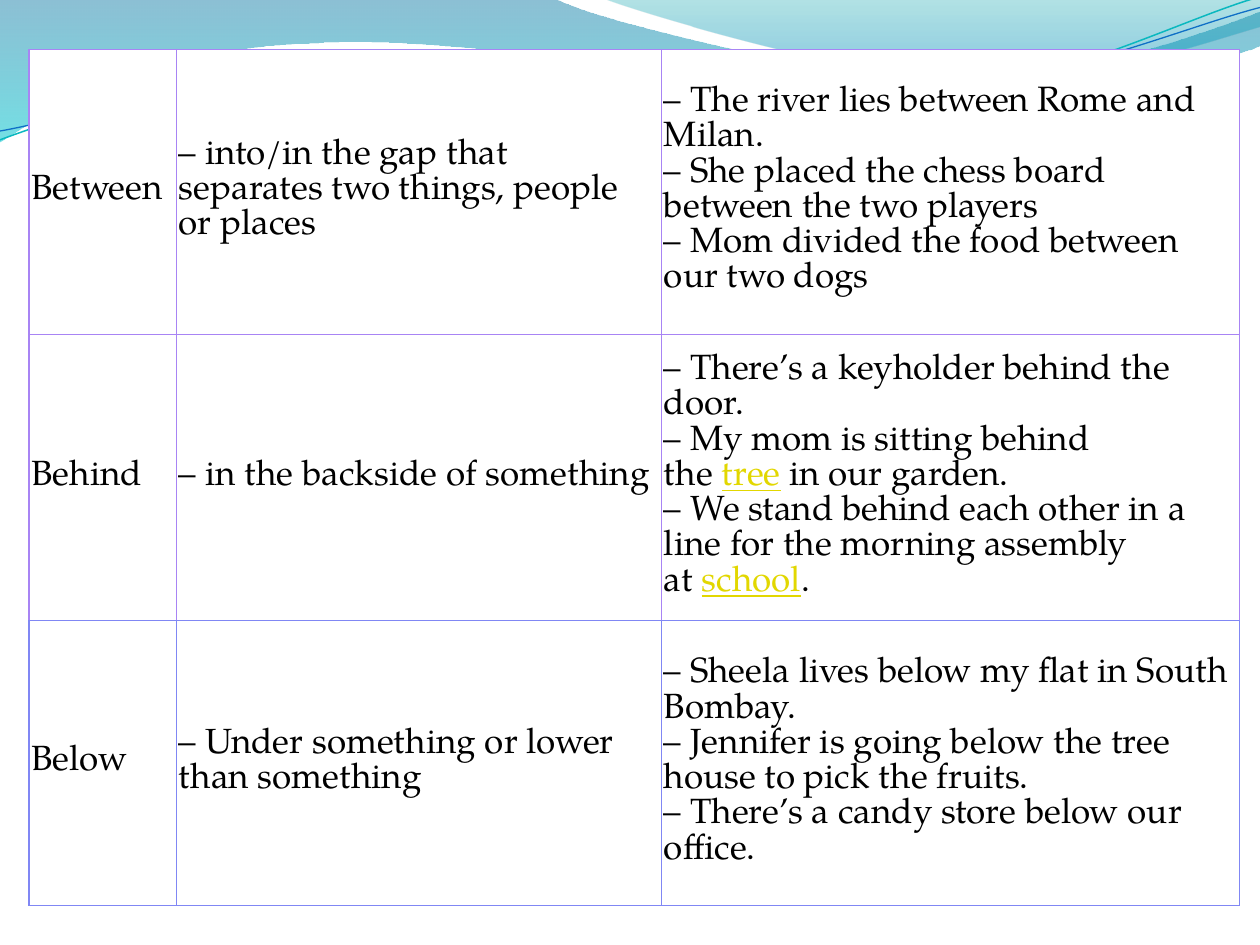
from math import cos, radians, sin

from lxml.etree import SubElement
from pptx import Presentation
from pptx.dml.color import RGBColor as RGB
from pptx.enum.text import MSO_ANCHOR as ANCHOR
from pptx.oxml.ns import qn
from pptx.oxml.xmlchemy import OxmlElement
from pptx.util import Inches, Pt

COLORS = {"text": "000000", "paper": "FFFFFF", "link": "E2D700",
          "violet": "A884F4", "indigo": "8087F4",
          "teal": "0AB8BF", "blue": "0F6FC6"}
NBSP = chr(160)

BIG_WAVE = [(0, 0), (4.4, -0.01), (4.76, 0.17, 6.64, 0.63, 7.58, 0.63),
            (8.53, 0.63, 9.58, 0.26, 10, 0.09), (10.01, 0.36),
            (9.83, 0.44, 8.7, 0.76, 7.46, 0.75),
            (6.22, 0.75, 3.82, 0.28, 2.57, 0.34),
            (1.29, 0.36, 0.46, 0.83, -0.01, 1.13), (0, 0)]
SMALL_WAVE = [(4.79, -0.01), (5.09, 0.11, 6.82, 0.62, 7.69, 0.65),
              (8.56, 0.69, 9.61, 0.32, 10, 0.21), (10, 0), (4.79, -0.01)]
TEAL_LINE = [(0, 1.11), (0.48, 0.93, 1.58, 0.57, 2.77, 0.52),
             (3.95, 0.47, 5.93, 0.89, 7.13, 0.8),
             (8.33, 0.71, 9.38, 0.15, 9.98, -0.02)]
BLUE_LINE = [(0, 1.04), (0.47, 0.96, 1.64, 0.61, 2.83, 0.56),
             (4.03, 0.51, 5.97, 0.84, 7.17, 0.75),
             (8.36, 0.67, 9.41, 0.21, 10, 0.06)]

ROWS = [
    ("Between",
     "– into/in the gap that separates two things, people or places",
     "– The river lies between Rome and Milan.\n"
     "– She placed the chess board between the two players\n"
     "– Mom divided the food between our two dogs"),
    ("Behind",
     "– in the backside of something",
     "– There’s a keyholder behind the door.\n"
     f"– My mom is sitting behind the{NBSP}|tree|{NBSP}in our garden.\n"
     "– We stand behind each other in a line for the morning assembly "
     f"at{NBSP}|school|."),
    ("Below",
     "– Under something or lower than something",
     "– Sheela lives below my flat in South Bombay.\n"
     "– Jennifer is going below the tree house to pick the fruits.\n"
     "– There’s a candy store below our office."),
]


def turn(segments, center, degrees):
    """Return the segments turned clockwise about a center."""
    cx, cy = center
    co, si = cos(radians(degrees)), sin(radians(degrees))
    turned = []
    for seg in segments:
        pairs = [(cx + (x - cx) * co - (y - cy) * si,
                  cy + (x - cx) * si + (y - cy) * co)
                 for x, y in zip(seg[::2], seg[1::2])]
        turned.append(sum(pairs, ()))
    return turned


class Deck:
    """Holds the style and the current slide."""

    font, size, margin, border = "TeX Gyre Pagella", Pt(20), Inches(0.02), Pt(0.75)

    def __init__(self):
        self.prs = Presentation()
        self.prs.slide_width, self.prs.slide_height = Inches(10), Inches(7.5)
        self.slide = self.prs.slides.add_slide(self.prs.slide_layouts[6])

    def outline(self, segments, close):
        """Add a freeform of straight (2 numbers) and cubic (6 numbers) segments."""
        pts = [(Inches(x), Inches(y)) for seg in segments
               for x, y in zip(seg[::2], seg[1::2])]
        fb = self.slide.shapes.build_freeform(*pts[0])
        fb.add_line_segments(pts[1:], close=close)
        s = fb.convert_to_shape()
        s.shadow.inherit = False
        lines = iter(list(s._element.iter(qn("a:lnTo"))))
        for seg in segments[1:]:
            group = [next(lines) for _ in seg[::2]]
            if len(group) == 3:
                cubic = OxmlElement("a:cubicBezTo")
                group[0].addprevious(cubic)
                for line in group:
                    cubic.append(line[0])
                    line.getparent().remove(line)
        return s

    def wave(self, segments, stops):
        """Add a closed shape with a translucent downward gradient."""
        s = self.outline(segments, True)
        s.line.fill.background()
        s.fill.gradient()
        s.fill.gradient_angle = 270
        for stop, (position, color, _) in zip(s.fill.gradient_stops, stops):
            stop.position = position
            stop.color.rgb = RGB.from_string(color)
        for clr, (_, _, alpha) in zip(s._element.spPr.iter(qn("a:srgbClr")), stops):
            SubElement(clr, qn("a:alpha"), val=str(alpha * 1000))

    def curve(self, segments, center, color, width, tilt=2.7):
        """Add an open curved line on a slightly tilted frame."""
        s = self.outline(turn(segments, center, tilt), False)
        s.rotation = 360 - tilt
        s.fill.background()
        s.line.color.rgb = RGB.from_string(COLORS[color])
        s.line.width = Pt(width)

    def table(self, rows, left, top, widths, height, edges):
        """Add a ruled table; edges lists the side and bottom colors per row."""
        frame = self.slide.shapes.add_table(
            len(rows), len(widths), Inches(left), Inches(top),
            Inches(sum(widths)), Inches(height))
        tbl = frame.table
        tbl.first_row = tbl.horz_banding = False
        for col, width in zip(tbl.columns, widths):
            col.width = Inches(width)
        for row, texts, (side, bottom) in zip(tbl.rows, rows, edges):
            row.height = Inches(height / len(rows))
            for cell, text in zip(row.cells, texts):
                self.cell(cell, text, {"L": side, "R": side, "T": side, "B": bottom})

    def cell(self, cell, text, borders):
        """Style one cell and write its text; bars enclose link words."""
        tcPr = cell._tc.get_or_add_tcPr()
        for edge, color in borders.items():
            ln = SubElement(tcPr, qn("a:ln" + edge), w=str(self.border))
            fill = SubElement(ln, qn("a:solidFill"))
            SubElement(fill, qn("a:srgbClr"), val=COLORS[color])
        cell.fill.solid()
        cell.fill.fore_color.rgb = RGB.from_string(COLORS["paper"])
        cell.vertical_anchor = ANCHOR.MIDDLE
        cell.margin_left = cell.margin_right = self.margin
        cell.margin_top = cell.margin_bottom = self.margin
        p = cell.text_frame.paragraphs[0]
        p.font.name, p.font.size = self.font, self.size
        for i, part in enumerate(text.split("|")):
            for j, line in enumerate(part.split("\n")):
                if j:
                    p.add_line_break()
                r = p.add_run()
                r.text = line
                r.font.color.rgb = RGB.from_string(COLORS["link" if i % 2 else "text"])
                if i % 2:
                    r.font.underline = True


def main():
    """Build and save the slide."""
    deck = Deck()
    deck.wave(BIG_WAVE, [(0, "0074A1", 45), (1, "00C6CF", 55)])
    deck.wave(SMALL_WAVE, [(0, "00A1A9", 30), (0.8, "008BBF", 45)])
    deck.curve(TEAL_LINE, (4.99, 0.58), "teal", 0.85)
    deck.curve(BLUE_LINE, (5, 0.59), "blue", 0.75)
    deck.table(ROWS, 0.23, 0.39, (1.17, 3.85, 4.59), 6.8,
               [("violet", "violet"), ("violet", "indigo"), ("indigo", "indigo")])
    deck.prs.save("out.pptx")


if __name__ == "__main__":
    main()
